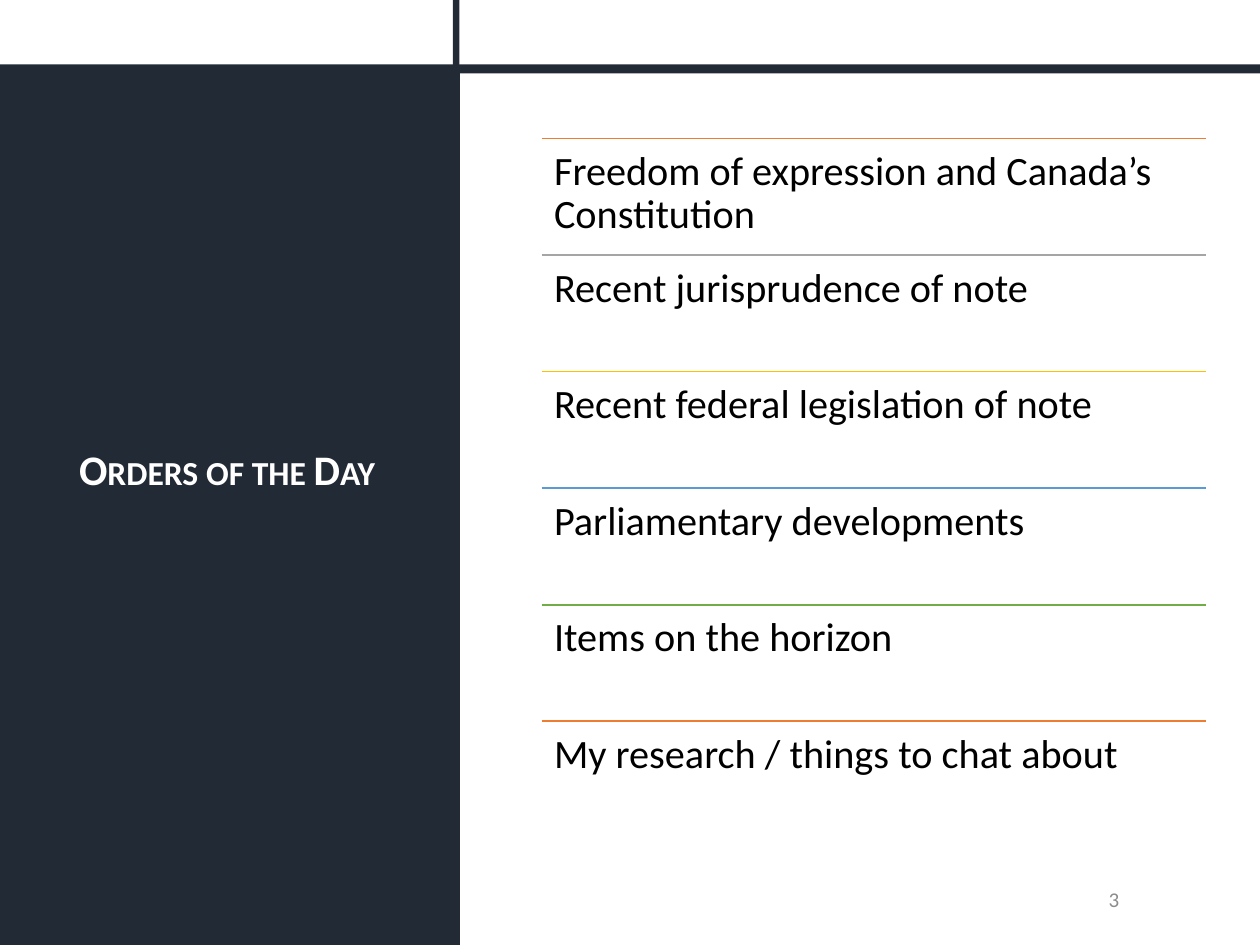
from lxml.etree import SubElement
from pptx import Presentation
from pptx.dml.color import RGBColor
from pptx.enum.shapes import MSO_CONNECTOR as Connector, MSO_SHAPE as Shape
from pptx.enum.text import MSO_ANCHOR as Anchor, MSO_AUTO_SIZE as AutoSize, PP_ALIGN as Align
from pptx.oxml.ns import qn
from pptx.util import Cm, Pt

COLOURS = {
    "navy": "222A35",
    "white": "FFFFFF",
    "black": "000000",
    "muted": "8C8C8C",
    "orange": "ED7D31",
    "grey": "A5A5A5",
    "gold": "FFC000",
    "blue": "5B9BD5",
    "green": "70AD47",
}
AGENDA = [
    ("Freedom of expression and Canada’s Constitution", "orange"),
    ("Recent jurisprudence of note", "grey"),
    ("Recent federal legislation of note", "gold"),
    ("Parliamentary developments", "blue"),
    ("Items on the horizon", "green"),
    ("My research / things to chat about", "orange"),
]
AGENDA_LEFT, AGENDA_TOP, AGENDA_WIDTH, ROW_HEIGHT = 10.92, 2.79, 13.39, 2.35


def colour(name):
    """Return the named colour."""
    return RGBColor.from_string(COLOURS[name])


def write(shape, text, size, ink, align=Align.LEFT, anchor=Anchor.TOP,
          bold=False, small_caps=False, inset=0.25, space_after=0):
    """Write one formatted paragraph into a shape."""
    frame = shape.text_frame
    frame.word_wrap = True
    frame.auto_size = AutoSize.NONE
    frame.vertical_anchor = anchor
    frame.margin_left = frame.margin_right = Cm(0.25)
    frame.margin_top = frame.margin_bottom = Cm(inset)
    paragraph = frame.paragraphs[0]
    paragraph.alignment = align
    paragraph.line_spacing = 0.9
    paragraph.space_before = Pt(0)
    paragraph.space_after = Pt(space_after)
    run = paragraph.add_run()
    run.text = text
    run.font.name = "Calibri"
    run.font.size = Pt(size)
    run.font.bold = bold
    run.font.color.rgb = colour(ink)
    if small_caps:
        run.font._element.set("cap", "small") if hasattr(run.font, "_element") else \
            run._r.get_or_add_rPr().set("cap", "small")


def add_block(slide, left, top, width, height, kind=Shape.RECTANGLE, fill=None):
    """Add a borderless shape, filled when a colour is given."""
    block = slide.shapes.add_shape(kind, Cm(left), Cm(top), Cm(width), Cm(height))
    block.shadow.inherit = False
    block.line.fill.background()
    if fill:
        block.fill.solid()
        block.fill.fore_color.rgb = colour(fill)
    else:
        block.fill.background()
    return block


def add_rule(slide, left, top, width, ink):
    """Add a thin horizontal rule."""
    rule = slide.shapes.add_connector(
        Connector.STRAIGHT, Cm(left), Cm(top), Cm(left + width), Cm(top))
    rule.line.color.rgb = colour(ink)
    rule.line.width = Pt(1)
    SubElement(rule._element.spPr, qn("a:effectLst"))


def add_title(slide, text):
    """Place the title over its dark side panel."""
    panel = add_block(slide, 0, 1.47, 9.27, 17.58, fill="navy")
    title = slide.shapes.title
    title._element.addprevious(panel._element)
    title.left, title.top, title.width, title.height = Cm(1.24), Cm(2.13), Cm(6.68), Cm(14.78)
    write(title, text, 24, "white", align=Align.CENTER, anchor=Anchor.MIDDLE,
          bold=True, small_caps=True, inset=0.13)


def add_agenda(slide):
    """Stack the agenda items, each under its coloured rule."""
    for row, (topic, ink) in enumerate(AGENDA):
        top = AGENDA_TOP + row * ROW_HEIGHT
        add_rule(slide, AGENDA_LEFT, top, AGENDA_WIDTH, ink)
        item = slide.shapes.add_textbox(
            Cm(AGENDA_LEFT), Cm(top), Cm(AGENDA_WIDTH), Cm(ROW_HEIGHT))
        write(item, topic, 23, "black", space_after=8)


def main():
    """Build and save the slide."""
    deck = Presentation()
    deck.slide_width, deck.slide_height = Cm(25.4), Cm(19.05)
    slide = deck.slides.add_slide(deck.slide_layouts[5])
    add_title(slide, "Orders of the Day")
    upright_bar = add_block(slide, -0.33, 9.45, 19.05, 0.13, fill="navy")
    upright_bar.rotation = 90
    add_block(slide, 0, 1.3, 25.4, 0.18, fill="navy")
    page_number = add_block(slide, 17.93, 17.65, 5.72, 1.02, kind=Shape.OVAL)
    write(page_number, "3", 12, "muted", align=Align.RIGHT, anchor=Anchor.MIDDLE,
          inset=0.13, space_after=6)
    add_agenda(slide)
    deck.save("out.pptx")


if __name__ == "__main__":
    main()
